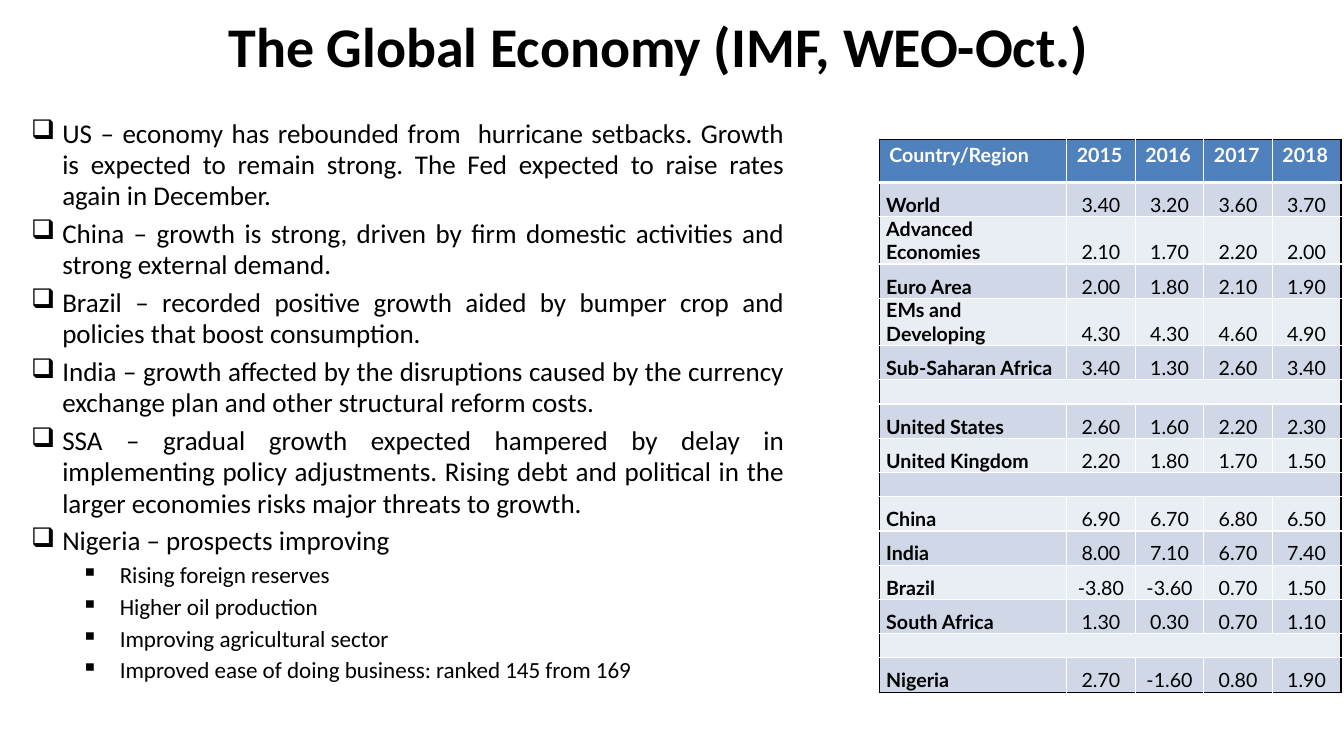
import dataclasses

import lxml.etree
import pptx
import pptx.dml.color
import pptx.enum.text
import pptx.oxml.ns
import pptx.util

Inches = pptx.util.Inches
Pt = pptx.util.Pt
Align = pptx.enum.text.PP_ALIGN
Anchor = pptx.enum.text.MSO_ANCHOR
qn = pptx.oxml.ns.qn

COLORS = {"black": "000000", "white": "FFFFFF", "header": "4F81BD",
          "dark_band": "D0D8E8", "light_band": "E9EDF4"}


@dataclasses.dataclass(frozen=True)
class BulletStyle:
    char: str
    size: float
    margin: float
    hang: float
    before: float


@dataclasses.dataclass(frozen=True)
class Growth:
    region: str = ""
    rates: tuple[str, ...] = ()
    height: float = 0.34


MAIN = BulletStyle("❑", 19.3, 0.31, 0.31, 4.4)
SUB = BulletStyle("▪", 16.5, 0.88, 0.38, 3.5)
SPACER = Growth(height=0.24)

POINTS = [
    (MAIN, "US – economy has rebounded from  hurricane setbacks. Growth is expected to "
           "remain strong. The Fed expected to raise rates again in December."),
    (MAIN, "China – growth is strong, driven by firm domestic activities and strong "
           "external demand."),
    (MAIN, "Brazil – recorded positive growth aided by bumper crop and policies that "
           "boost consumption."),
    (MAIN, "India – growth affected by the disruptions caused by the currency exchange "
           "plan and other structural reform costs."),
    (MAIN, "SSA – gradual growth expected hampered by delay in implementing policy "
           "adjustments. Rising debt and political in the larger economies risks major "
           "threats to growth."),
    (MAIN, "Nigeria – prospects improving"),
    (SUB, "Rising foreign reserves"),
    (SUB, "Higher oil production"),
    (SUB, "Improving agricultural sector"),
    (SUB, "Improved ease of doing business: ranked 145 from 169"),
]

COLUMN_WIDTHS = [1.86] + [0.68] * 4
GROWTH_ROWS = [
    Growth("Country/Region", ("2015", "2016", "2017", "2018"), 0.43),
    Growth("World", ("3.40", "3.20", "3.60", "3.70")),
    Growth("Advanced Economies", ("2.10", "1.70", "2.20", "2.00"), 0.47),
    Growth("Euro Area", ("2.00", "1.80", "2.10", "1.90")),
    Growth("EMs and Developing", ("4.30", "4.30", "4.60", "4.90"), 0.47),
    Growth("Sub-Saharan Africa", ("3.40", "1.30", "2.60", "3.40")),
    SPACER,
    Growth("United States", ("2.60", "1.60", "2.20", "2.30")),
    Growth("United Kingdom", ("2.20", "1.80", "1.70", "1.50")),
    SPACER,
    Growth("China", ("6.90", "6.70", "6.80", "6.50")),
    Growth("India", ("8.00", "7.10", "6.70", "7.40")),
    Growth("Brazil", ("-3.80", "-3.60", "0.70", "1.50")),
    Growth("South Africa", ("1.30", "0.30", "0.70", "1.10")),
    SPACER,
    Growth("Nigeria", ("2.70", "-1.60", "0.80", "1.90")),
]


def rgb(name: str) -> pptx.dml.color.RGBColor:
    return pptx.dml.color.RGBColor.from_string(COLORS[name])


def write(para, text: str, *, size: float, font: str = "Calibri", color: str = "black",
          bold: bool = False, align=Align.LEFT) -> None:
    para.alignment = align
    span = para.add_run()
    span.text = text
    span.font.name = font
    span.font.size = Pt(size)
    span.font.bold = bold
    span.font.color.rgb = rgb(color)


def add_frame(page, left: float, top: float, width: float, height: float, anchor):
    box = page.shapes.add_textbox(Inches(left), Inches(top), Inches(width), Inches(height))
    box.text_frame.word_wrap = True
    box.text_frame.vertical_anchor = anchor
    return box.text_frame


def set_bullet(para, style: BulletStyle) -> None:
    para.line_spacing = 0.97
    para.space_before = Pt(style.before)
    properties = para._p.get_or_add_pPr()
    properties.set("marL", str(Inches(style.margin)))
    properties.set("indent", str(-Inches(style.hang)))
    lxml.etree.SubElement(properties, qn("a:buChar"), char=style.char)


def set_borders(cell, borders: dict[str, tuple[str, float]]) -> None:
    properties = cell._tc.get_or_add_tcPr()
    for position, side in enumerate("LRTB"):
        color, width = borders[side]
        line = lxml.etree.Element(qn(f"a:ln{side}"), w=str(Pt(width)))
        fill = lxml.etree.SubElement(line, qn("a:solidFill"))
        lxml.etree.SubElement(fill, qn("a:srgbClr"), val=COLORS[color])
        properties.insert(position, line)


def fill_cell(cell, text: str, row: int, column: int) -> None:
    header = row == 0
    side_inset, end_inset = (0.1, 0.04) if header else (0.07, 0)
    cell.margin_left = cell.margin_right = Inches(side_inset)
    cell.margin_top = cell.margin_bottom = Inches(end_inset)
    cell.vertical_anchor = Anchor.TOP if header else Anchor.BOTTOM
    para = cell.text_frame.paragraphs[0]
    if text:
        write(para, text, size=14, font="Lato", color="white" if header else "black",
              bold=header or column == 0,
              align=Align.LEFT if header or column == 0 else Align.CENTER)
    else:
        lxml.etree.SubElement(para._p, qn("a:endParaRPr"), sz="1400")
    band = "header" if header else "dark_band" if row % 2 else "light_band"
    cell.fill.solid()
    cell.fill.fore_color.rgb = rgb(band)

    def edge(outer: bool) -> str:
        return "black" if outer else "white"

    set_borders(cell, {
        "L": (edge(column == 0), 1),
        "R": (edge(column == len(COLUMN_WIDTHS) - 1 or not text), 1),
        "T": (edge(header), 1),
        "B": (edge(row == len(GROWTH_ROWS) - 1), 3 if header else 1),
    })


def add_growth_table(page, left: float, top: float) -> None:
    height = sum(growth.height for growth in GROWTH_ROWS)
    table = page.shapes.add_table(
        len(GROWTH_ROWS), len(COLUMN_WIDTHS), Inches(left), Inches(top),
        Inches(sum(COLUMN_WIDTHS)), Inches(height)).table
    table.horz_banding = False
    for column, width in zip(table.columns, COLUMN_WIDTHS):
        column.width = Inches(width)
    for row, growth in enumerate(GROWTH_ROWS):
        table.rows[row].height = Inches(growth.height)
        texts = (growth.region, *growth.rates) if growth.region else [""] * len(COLUMN_WIDTHS)
        for column, text in enumerate(texts):
            fill_cell(table.cell(row, column), text, row, column)
        if not growth.region:
            table.cell(row, 0).merge(table.cell(row, len(COLUMN_WIDTHS) - 1))


def main() -> None:
    deck = pptx.Presentation()
    deck.slide_width, deck.slide_height = Inches(13.33), Inches(7.5)
    page = deck.slides.add_slide(deck.slide_layouts[6])

    # Title
    title = add_frame(page, 1.67, 0.09, 9.72, 0.72, Anchor.MIDDLE)
    write(title.paragraphs[0], "The Global Economy (IMF, WEO-Oct.)", size=40, bold=True,
          align=Align.CENTER)

    # Country outlook
    outlook = add_frame(page, 0.21, 1.12, 7.67, 6.52, Anchor.TOP)
    for index, (style, text) in enumerate(POINTS):
        para = outlook.add_paragraph() if index else outlook.paragraphs[0]
        write(para, text, size=style.size, align=Align.JUSTIFY)
        set_bullet(para, style)

    # Growth rates
    add_growth_table(page, 8.72, 1.38)
    deck.save("out.pptx")


if __name__ == "__main__":
    main()
